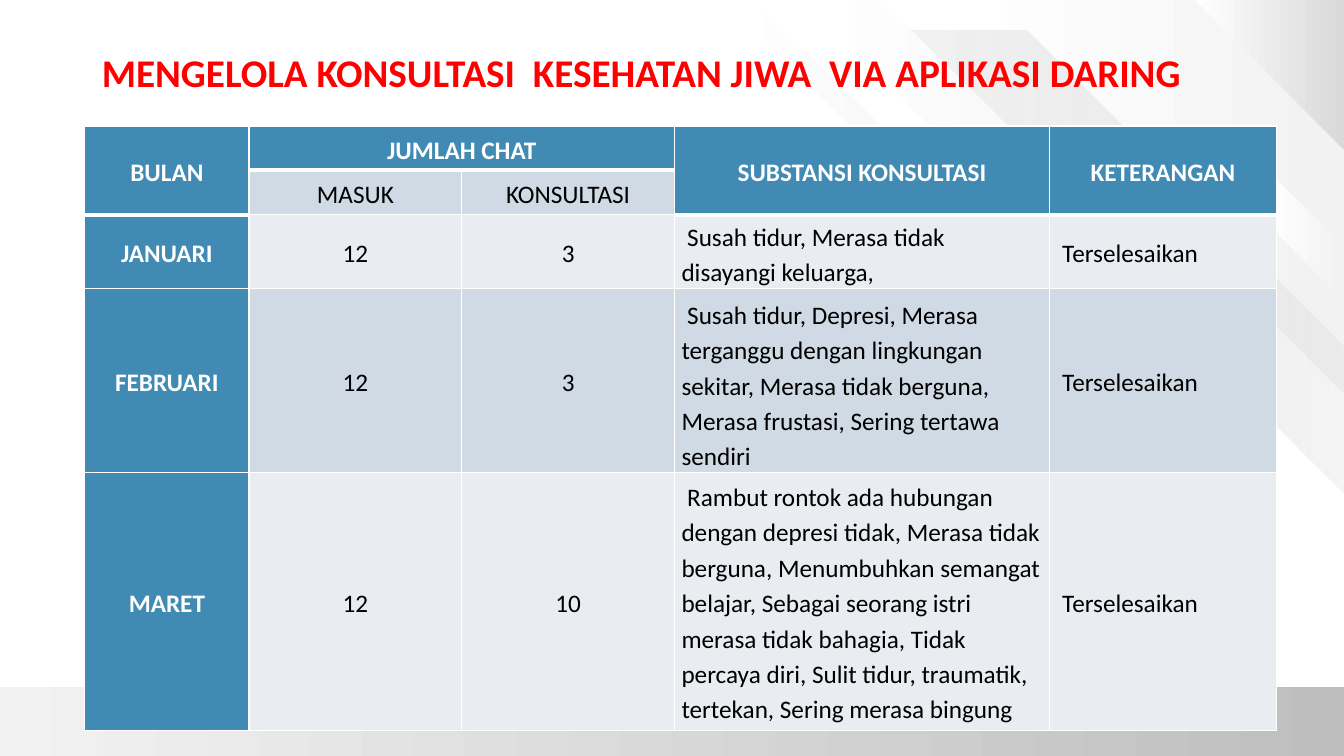
from pptx import Presentation
from pptx.dml.color import RGBColor
from pptx.enum.shapes import MSO_SHAPE as Shape
from pptx.enum.text import MSO_ANCHOR as Anchor, MSO_AUTO_SIZE as Fit, PP_ALIGN as Align
from pptx.oxml import parse_xml
from pptx.oxml.ns import nsdecls, qn
from pptx.util import Inches, Pt

FONT = "Calibri"
WHITE, BLACK, RED = "FFFFFF", "000000", "FF0000"
BLUE, LIGHT, PALE = "418AB3", "CFDAE5", "E9EDF2"
SOFT, GREY = "F2F2F2", "D9D9D9"

# Outline points in inches, first colour, last colour, opacity of the last colour
BANDS = [
    ([(13.33, 0), (9.43, 0), (13.33, 3.9)], WHITE, SOFT, 100),
    ([(13.33, 3.44), (10.19, 0.3), (8.71, 0.3), (13.33, 4.91)], SOFT, GREY, 26),
    ([(13.33, 2.45), (12.49, 1.61), (12.49, 2.14), (13.33, 2.98)], WHITE, SOFT, 100),
    ([(11.57, 2.82), (8.74, 0), (7.97, 0), (10.8, 2.82)], WHITE, SOFT, 100),
    ([(13.33, 0), (11.85, 0), (13.33, 1.48)], WHITE, GREY, 100),
    ([(7.48, 0), (10.01, 2.53), (10.01, 2.82), (7.18, 0)], WHITE, SOFT, 100),
]

COLS = [1.63, 2.11, 2.11, 3.72, 2.25]
ROWS = [0.44, 0.44, 0.73, 1.83, 2.56]
MERGES = [((0, 0), (1, 0)), ((0, 1), (0, 2)), ((0, 3), (1, 3)), ((0, 4), (1, 4))]
DATA = [
    ["BULAN", "JUMLAH CHAT", "", "SUBSTANSI KONSULTASI", "KETERANGAN"],
    ["", "MASUK", "KONSULTASI", "", ""],
    ["JANUARI", "12", "3",
     " Susah tidur, Merasa tidak disayangi keluarga,", " Terselesaikan"],
    ["FEBRUARI", "12", "3",
     " Susah tidur, Depresi, Merasa terganggu dengan lingkungan sekitar, "
     "Merasa tidak berguna, Merasa frustasi, Sering tertawa sendiri", " Terselesaikan"],
    ["MARET", "12", "10",
     " Rambut rontok ada hubungan dengan depresi tidak, Merasa tidak berguna, "
     "Menumbuhkan semangat belajar, Sebagai seorang istri merasa tidak bahagia, "
     "Tidak percaya diri, Sulit tidur, traumatik, tertekan, Sering merasa bingung",
     " Terselesaikan"],
]


def rgb(code):
    return RGBColor.from_string(code)


def write(frame, text, size=18, color=BLACK, bold=False, align=Align.LEFT, space=1.0):
    par = frame.paragraphs[0]
    par.alignment = align
    par.line_spacing = space
    run = par.add_run()
    run.text = text
    font = run.font
    font.name, font.size, font.bold = FONT, Pt(size), bold
    font.color.rgb = rgb(color)


def shade(shape, first, last, angle=0, alpha=100):
    """Give a shape a two-colour gradient, with no line or shadow."""
    shape.shadow.inherit = False
    shape.line.fill.background()
    fill = shape.fill
    fill.gradient()
    fill.gradient_angle = angle
    for stop, code in zip(fill.gradient_stops, (first, last)):
        stop.color.rgb = rgb(code)
    if alpha < 100:
        end = list(shape.element.spPr.iter(qn("a:srgbClr")))[-1]
        end.append(parse_xml(f'<a:alpha {nsdecls("a")} val="{alpha * 1000}"/>'))


def add_band(slide, points, first, last, alpha):
    start, *rest = [(Inches(x), Inches(y)) for x, y in points]
    pen = slide.shapes.build_freeform(*start)
    pen.add_line_segments(rest)
    shade(pen.convert_to_shape(), first, last, alpha=alpha)


def add_decor(slide):
    bar = slide.shapes.add_shape(
        Shape.RECTANGLE, 0, Inches(6.82), Inches(13.33), Inches(0.68))
    shade(bar, "BFBEBE", SOFT, angle=180)
    for band in BANDS:
        add_band(slide, *band)


def edge(cell, sides):
    """Draw white borders; sides maps L, R, T, B (in that order) to points."""
    props = cell._tc.get_or_add_tcPr()
    for spot, (side, width) in enumerate(sides.items()):
        props.insert(spot, parse_xml(
            f'<a:ln{side} {nsdecls("a")} w="{Pt(width)}"><a:solidFill>'
            f'<a:srgbClr val="{WHITE}"/></a:solidFill></a:ln{side}>'))


def style(cell, row, col, text):
    sub = row == 1 and col in (1, 2)
    head = row < 2 and not sub
    dark = head or col == 0
    cell.fill.solid()
    cell.fill.fore_color.rgb = rgb(BLUE if dark else LIGHT if row % 2 else PALE)
    cell.margin_left = cell.margin_right = Inches(0.07)
    cell.margin_top = cell.margin_bottom = 0
    low = col == 3 and row in (2, 3)
    cell.vertical_anchor = Anchor.BOTTOM if low else Anchor.MIDDLE
    sides = {"L": 1, "R": 1}
    if row == 0:
        sides["T"] = 1
    sides["B"] = 3 if head else 1
    edge(cell, sides)
    if text:
        write(cell.text_frame, text, color=WHITE if dark else BLACK, bold=dark,
              align=Align.CENTER if row < 2 or col < 3 else Align.LEFT, space=1.15)


def add_grid(slide):
    table = slide.shapes.add_table(
        len(ROWS), len(COLS), Inches(0.84), Inches(1.25),
        Inches(sum(COLS)), Inches(sum(ROWS))).table
    for col, width in zip(table.columns, COLS):
        col.width = Inches(width)
    for row, height in zip(table.rows, ROWS):
        row.height = Inches(height)
    for first, last in MERGES:
        table.cell(*first).merge(table.cell(*last))
    for row, line in enumerate(DATA):
        for col, text in enumerate(line):
            style(table.cell(row, col), row, col, text)


def add_title(slide, text):
    title = slide.shapes.title
    title.left, title.top = Inches(0.91), Inches(0.43)
    title.width, title.height = Inches(11.7), Inches(0.57)
    frame = title.text_frame
    frame.word_wrap = True
    frame.auto_size = Fit.SHAPE_TO_FIT_TEXT
    frame.vertical_anchor = Anchor.TOP
    write(frame, text, size=28, color=RED, bold=True)
    # The title goes in front of the bands
    title.element.getparent().append(title.element)


def main():
    deck = Presentation()
    deck.slide_width, deck.slide_height = Inches(13.33), Inches(7.5)
    slide = deck.slides.add_slide(deck.slide_layouts[5])
    add_decor(slide)
    add_grid(slide)
    add_title(slide, "MENGELOLA KONSULTASI  KESEHATAN JIWA  VIA APLIKASI DARING")
    deck.save("out.pptx")


if __name__ == "__main__":
    main()
